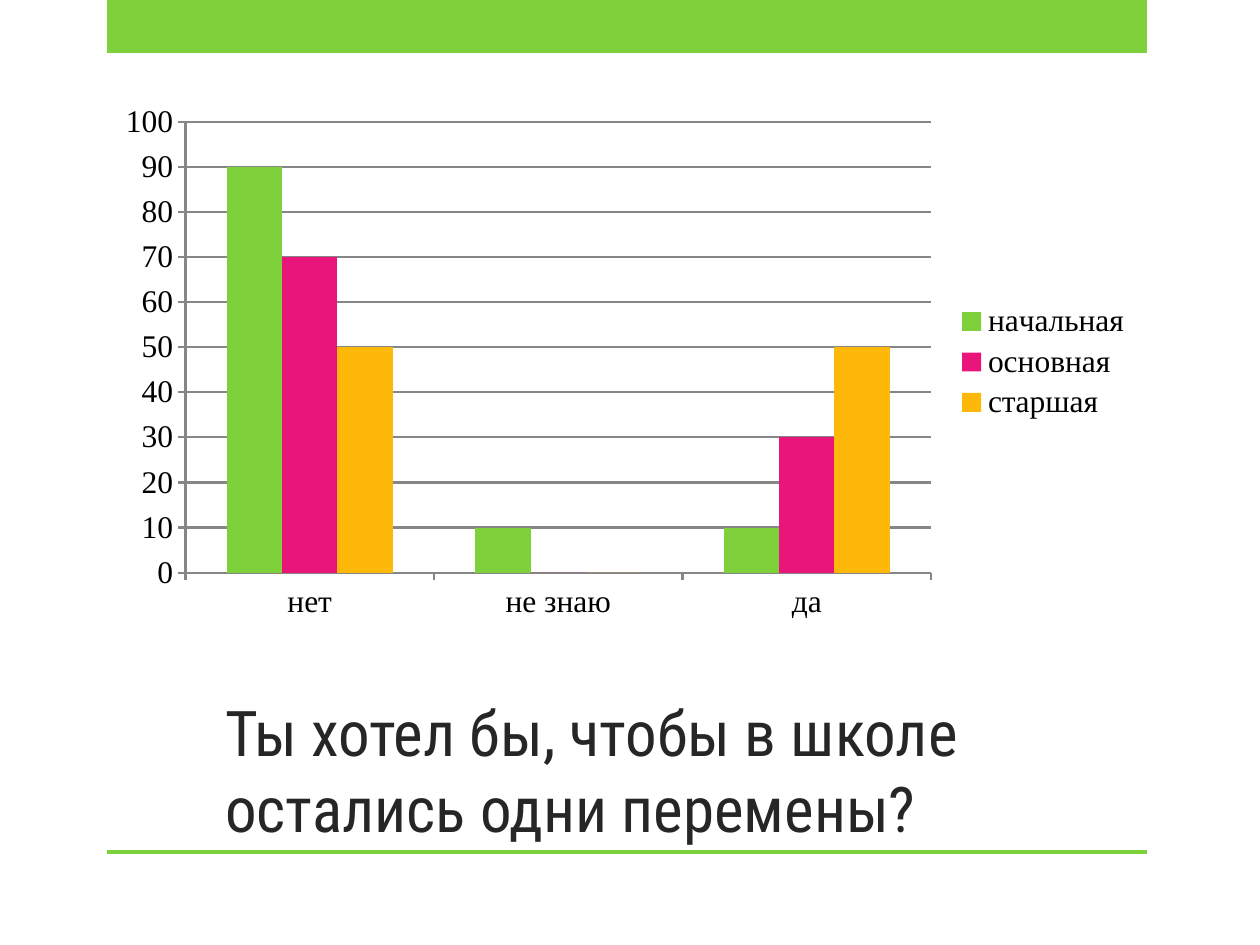
"""Build a survey slide with a clustered column chart and a title question."""
from dataclasses import dataclass

from pptx import Presentation
from pptx.chart.data import CategoryChartData
from pptx.dml.color import RGBColor
from pptx.enum.chart import XL_CHART_TYPE as ChartType, XL_LEGEND_POSITION as LegendPosition
from pptx.enum.chart import XL_TICK_MARK as TickMark
from pptx.enum.shapes import MSO_SHAPE as Shape
from pptx.enum.text import MSO_ANCHOR as Anchor
from pptx.util import Inches, Pt

QUESTION = "Ты хотел бы, чтобы в школе остались одни перемены?"
ANSWERS = ["нет", "не знаю", "да"]
SCHOOLS = [
    ("начальная", (90, 10, 10), "7FD13B"),
    ("основная", (70, 0, 30), "EA157A"),
    ("старшая", (50, 0, 50), "FEB80A"),
]
BANDS = [(107, 0, 1040, 53), (107, 850, 1040, 4)]
CHART_AREA = (105, 94, 1040, 536)
TITLE_AREA = (213, 631, 935, 220)
PX_PER_INCH = 126


@dataclass(frozen=True)
class Theme:
    accent: str = "7FD13B"
    title: str = "262626"
    label: str = "000000"
    grid: str = "868686"
    title_font: str = "Roboto Condensed"
    chart_font: str = "Times New Roman"
    title_size: int = 36
    chart_size: int = 18
    grid_width: float = 1.25


THEME = Theme()


def scaled(area):
    return [Inches(px / PX_PER_INCH) for px in area]


def style_font(font, name, size, color):
    font.name = name
    font.size = Pt(size)
    font.color.rgb = RGBColor.from_string(color)


def style_line(line):
    line.color.rgb = RGBColor.from_string(THEME.grid)
    line.width = Pt(THEME.grid_width)


def add_band(page, area):
    band = page.shapes.add_shape(Shape.RECTANGLE, *scaled(area))
    band.shadow.inherit = False
    band.fill.solid()
    band.fill.fore_color.rgb = RGBColor.from_string(THEME.accent)
    band.line.fill.background()


def add_title(page):
    box = page.shapes.add_textbox(*scaled(TITLE_AREA))
    frame = box.text_frame
    frame.word_wrap = True
    frame.vertical_anchor = Anchor.BOTTOM
    span = frame.paragraphs[0].add_run()
    span.text = QUESTION
    style_font(span.font, THEME.title_font, THEME.title_size, THEME.title)


def add_answers_chart(page):
    data = CategoryChartData()
    data.categories = ANSWERS
    for name, values, _ in SCHOOLS:
        data.add_series(name, values)
    chart = page.shapes.add_chart(
        ChartType.COLUMN_CLUSTERED, *scaled(CHART_AREA), data
    ).chart
    chart.has_title = False
    style_font(chart.font, THEME.chart_font, THEME.chart_size, THEME.label)
    chart.has_legend = True
    chart.legend.position = LegendPosition.RIGHT
    chart.legend.include_in_layout = False

    for axis in (chart.category_axis, chart.value_axis):
        axis.major_tick_mark = TickMark.OUTSIDE
        axis.minor_tick_mark = TickMark.NONE
        style_line(axis.format.line)
    scale = chart.value_axis
    scale.minimum_scale, scale.maximum_scale, scale.major_unit = 0, 100, 10
    scale.has_major_gridlines = True
    style_line(scale.major_gridlines.format.line)

    plot = chart.plots[0]
    plot.vary_by_categories = False
    plot.gap_width = 150
    plot.overlap = 0
    for series, (_, _, color) in zip(plot.series, SCHOOLS):
        series.format.fill.solid()
        series.format.fill.fore_color.rgb = RGBColor.from_string(color)


def main():
    deck = Presentation()
    deck.slide_width, deck.slide_height = Inches(10), Inches(7.5)
    page = deck.slides.add_slide(deck.slide_layouts[6])
    for area in BANDS:
        add_band(page, area)
    add_title(page)
    add_answers_chart(page)
    deck.save("out.pptx")


if __name__ == "__main__":
    main()
